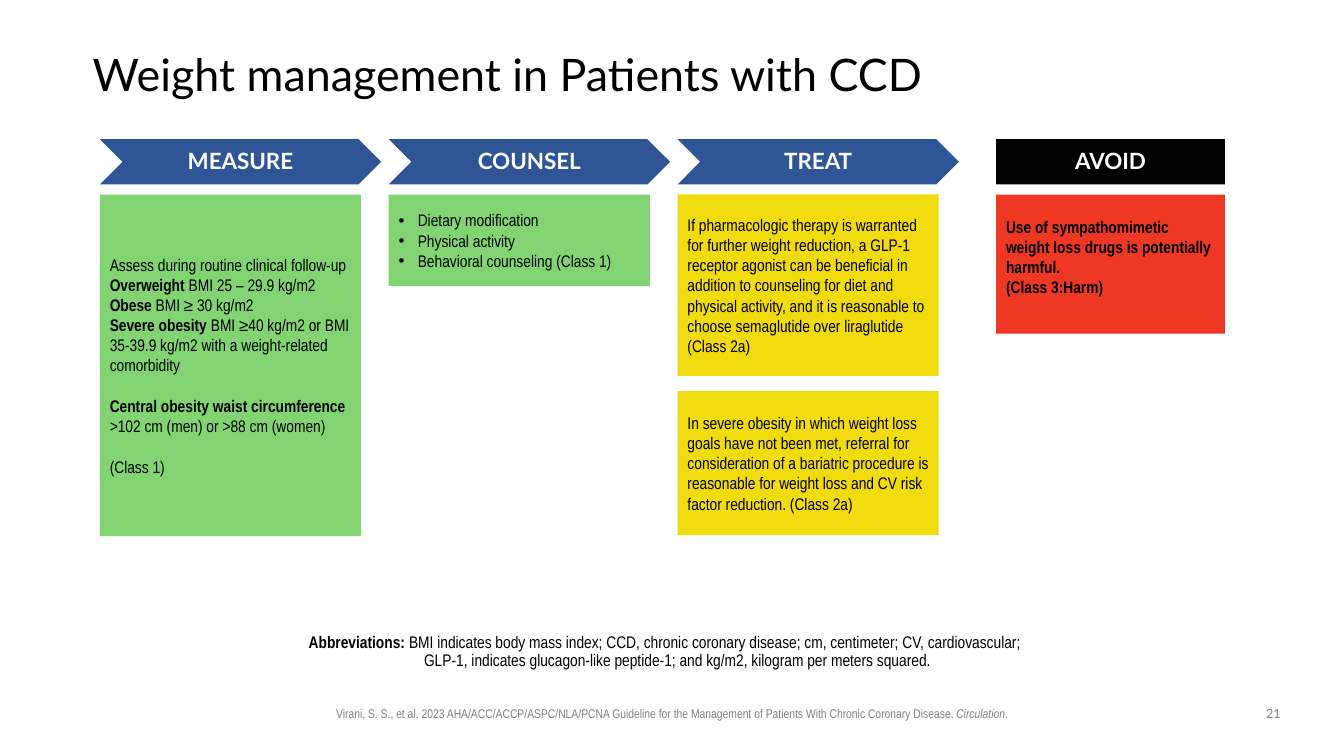
from lxml import etree
from pptx import Presentation
from pptx.dml.color import RGBColor
from pptx.enum.shapes import MSO_SHAPE as Shape
from pptx.enum.text import MSO_ANCHOR as Anchor, PP_ALIGN as Align
from pptx.oxml.ns import qn
from pptx.util import Inches, Pt

COLORS = {"step": "2F5597", "avoid": "000000", "class1": "82D472",
          "class2a": "F0DB0E", "harm": "EE3823",
          "ink": "000000", "white": "FFFFFF", "muted": "808080"}
HEADING, BODY = "Lato", "Arial Narrow"
SLIDE_W, SLIDE_H = 13.33, 7.5

# Column grid
LEFT, STEP = 0.99, 2.865
CARD_W, ARROW_W, AVOID_W = 2.59, 2.79, 2.27
HEADER_TOP, HEADER_H, CARD_TOP, CARD_GAP = 1.38, 0.45, 1.93, 0.15
BLANK_LINE = 14.5

# A card is (fill, height, bulleted, paragraphs); a paragraph is
# (space before, [(text, bold), ...])
MEASURE = [("class1", 3.39, False, [
    (0, [("Assess during routine clinical follow-up", False)]),
    (0, [("Overweight ", True), ("BMI 25 – 29.9 kg/m2", False)]),
    (0, [("Obese", True), (" BMI ≥ 30 kg/m2", False)]),
    (0, [("Severe obesity ", True),
         ("BMI ≥40 kg/m2 or BMI 35-39.9 kg/m2 with a weight-related comorbidity", False)]),
    (BLANK_LINE, [("Central obesity waist circumference", True)]),
    (0, [(">102 cm (men) or >88 cm (women)", False)]),
    (BLANK_LINE, [("(Class 1)", False)])])]
COUNSEL = [("class1", 0.91, True, [
    (0, [("Dietary modification", False)]),
    (0, [("Physical activity", False)]),
    (0, [("Behavioral counseling (Class 1)", False)])])]
TREAT = [
    ("class2a", 1.8, False, [
        (0, [("If pharmacologic therapy is warranted for further weight reduction, a GLP-1 "
              "receptor agonist can be beneficial in addition to counseling for diet and "
              "physical activity, and it is reasonable to choose semaglutide over "
              "liraglutide (Class 2a)", False)])]),
    ("class2a", 1.43, False, [
        (0, [("In severe obesity in which weight loss goals have not been met, referral for "
              "consideration of a bariatric procedure is reasonable for weight loss and CV "
              "risk factor reduction. (Class 2a)", False)])])]
AVOID = [("harm", 1.38, False, [
    (0, [("Use of sympathomimetic", True)]),
    (0, [("weight loss drugs is potentially harmful.", True)]),
    (0, [("(Class 3:Harm)", True)])])]


def rgb(name):
    return RGBColor.from_string(COLORS[name])


def style(paragraph, font, size, color, align=Align.LEFT, bold=None):
    paragraph.alignment = align
    paragraph.font.name, paragraph.font.size = font, Pt(size)
    paragraph.font.color.rgb = rgb(color)
    paragraph.font.bold = bold


def indent(paragraph, hang, bullet=None):
    props = paragraph._p.get_or_add_pPr()
    props.set("marL", str(Inches(hang)))
    props.set("indent", str(-Inches(hang)))
    if bullet:
        etree.SubElement(props, qn("a:buFont")).set("typeface", "Arial")
        etree.SubElement(props, qn("a:buChar")).set("char", bullet)


def set_insets(frame, left, top, right, bottom):
    frame.margin_left, frame.margin_top = Inches(left), Inches(top)
    frame.margin_right, frame.margin_bottom = Inches(right), Inches(bottom)


def add_panel(slide, kind, box, fill):
    panel = slide.shapes.add_shape(kind, *map(Inches, box))
    panel.shadow.inherit = False
    panel.fill.solid()
    panel.fill.fore_color.rgb = rgb(fill)
    panel.line.fill.background()
    panel.text_frame.word_wrap = True
    panel.text_frame.vertical_anchor = Anchor.MIDDLE
    return panel


def add_text(slide, box):
    frame = slide.shapes.add_textbox(*map(Inches, box)).text_frame
    frame.word_wrap = True
    return frame


def add_header(slide, box, label, fill, pointed):
    header = add_panel(slide, Shape.CHEVRON, box, fill)
    header.adjustments[0] = 0.5 if pointed else 0
    set_insets(header.text_frame, 0, 0, 0, 0)
    title = header.text_frame.paragraphs[0]
    title.text, title.line_spacing = label, 0.9
    style(title, HEADING, 16, "white", Align.CENTER, True)


def add_card(slide, box, fill, bulleted, content):
    frame = add_panel(slide, Shape.RECTANGLE, box, fill).text_frame
    if fill == "harm":
        set_insets(frame, 0.1, 0.05, 0.1, 0.19)
    for number, (before, runs) in enumerate(content):
        line = frame.add_paragraph() if number else frame.paragraphs[0]
        if bulleted:
            indent(line, 0.19, "•")
        if before:
            line.space_before = Pt(before)
        style(line, BODY, 12, "ink")
        for words, bold in runs:
            run = line.add_run()
            run.text, run.font.bold = words, bold


def add_column(slide, left, header_w, card_w, label, fill, cards, pointed=True):
    add_header(slide, (left, HEADER_TOP, header_w, HEADER_H), label, fill, pointed)
    top = CARD_TOP
    for card_fill, height, bulleted, content in cards:
        add_card(slide, (left, top, card_w, height), card_fill, bulleted, content)
        top += height + CARD_GAP


def add_title(slide, box):
    frame = add_text(slide, box)
    frame.vertical_anchor = Anchor.MIDDLE
    set_insets(frame, 0, 0, 0, 0)
    title = frame.paragraphs[0]
    title.text, title.line_spacing = "Weight management in Patients with CCD", 0.9
    style(title, HEADING, 32, "ink")


def add_abbreviations(slide, box):
    frame = add_text(slide, box)
    set_insets(frame, 0, 0.05, 0.1, 0.05)
    note = frame.paragraphs[0]
    indent(note, 0.25)
    note.line_spacing = 0.9
    style(note, BODY, 12, "ink", Align.CENTER)
    lead = note.add_run()
    lead.text, lead.font.bold = "Abbreviations: ", True
    note.add_run().text = (
        "BMI indicates body mass index; CCD, chronic coronary disease; cm, centimeter; "
        "CV, cardiovascular; GLP-1, indicates glucagon-like peptide-1; and kg/m2, "
        "kilogram per meters squared.")


def add_footer(slide, citation_box, number_box):
    citation = add_text(slide, citation_box).paragraphs[0]
    style(citation, BODY, 9, "muted", Align.CENTER)
    citation.add_run().text = (
        "Virani, S. S., et al. 2023 AHA/ACC/ACCP/ASPC/NLA/PCNA Guideline for the "
        "Management of Patients With Chronic Coronary Disease. ")
    journal = citation.add_run()
    journal.text, journal.font.italic = "Circulation", True
    citation.add_run().text = "."
    number = add_text(slide, number_box).paragraphs[0]
    number.text = "21"
    style(number, HEADING, 9, "muted", Align.CENTER)


def main():
    deck = Presentation()
    deck.slide_width, deck.slide_height = Inches(SLIDE_W), Inches(SLIDE_H)
    slide = deck.slides.add_slide(deck.slide_layouts[6])

    add_title(slide, (0.92, 0.4, 11.5, 0.72))
    # Three steps, then the warning column
    steps = [("MEASURE", MEASURE), ("COUNSEL", COUNSEL), ("TREAT", TREAT)]
    for column, (label, cards) in enumerate(steps):
        add_column(slide, LEFT + column * STEP, ARROW_W, CARD_W, label, "step", cards)
    add_column(slide, 9.88, AVOID_W, AVOID_W, "AVOID", "avoid", AVOID, pointed=False)
    # Notes at the foot
    add_abbreviations(slide, (3.06, 6.24, 7.17, 0.44))
    add_footer(slide, (2.94, 6.95, 7.45, 0.25), (12.42, 6.95, 0.42, 0.26))
    deck.save("out.pptx")


if __name__ == "__main__":
    main()
